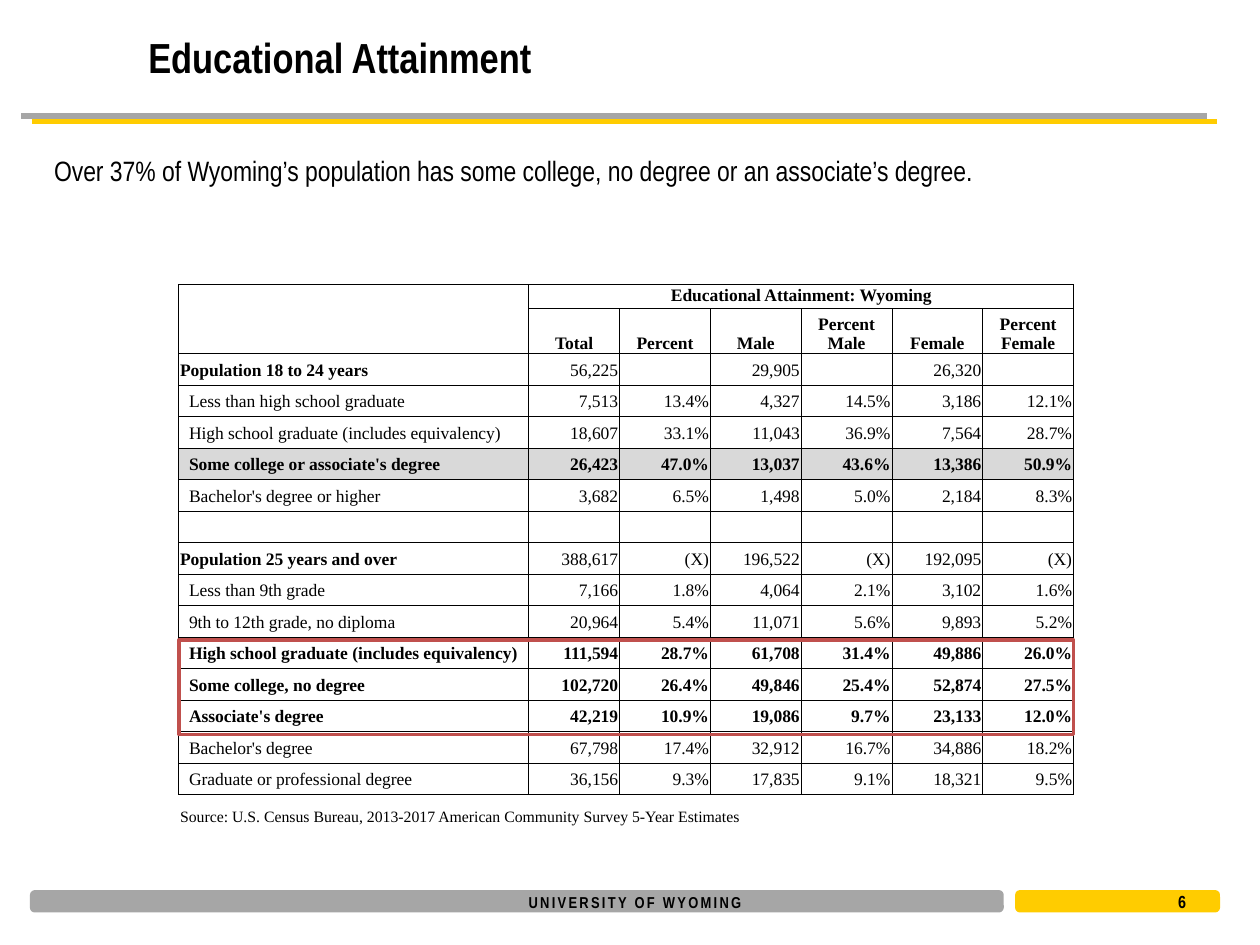
from lxml.etree import SubElement
from pptx import Presentation
from pptx.dml.color import RGBColor
from pptx.enum.shapes import MSO_CONNECTOR, MSO_SHAPE
from pptx.enum.text import MSO_ANCHOR as Anchor, PP_ALIGN as Align
from pptx.oxml.ns import qn
from pptx.util import Cm, Pt

BLACK = RGBColor(0x00, 0x00, 0x00)
WHITE = RGBColor(0xFF, 0xFF, 0xFF)
GRAY = RGBColor(0xA6, 0xA6, 0xA6)
GOLD = RGBColor(0xFF, 0xCC, 0x00)
SHADE = RGBColor(0xD9, 0xD9, 0xD9)
RED = RGBColor(0xC0, 0x50, 0x4D)
SANS, SERIF = "Arial Narrow", "Times New Roman"
PLAIN_TABLE = "{2D5ABB26-0587-4C30-8999-92F81FD0307C}"

TABLE_BOX = (3.6, 5.74, 18.03, 10.92)
LABEL_WIDTH, COLUMN_WIDTH = 5.23, 1.83
HEADER_HEIGHTS = (0.48, 0.91)
HEADINGS = ("Total", "Percent", "Male", "Percent Male", "Female", "Percent Female")
SOURCE = "Source: U.S. Census Bureau, 2013-2017 American Community Survey 5-Year Estimates"

# Row style, label, values
ROWS = (
    ("group", "Population 18 to 24 years", ("56,225", "", "29,905", "", "26,320", "")),
    ("plain", "Less than high school graduate",
     ("7,513", "13.4%", "4,327", "14.5%", "3,186", "12.1%")),
    ("plain", "High school graduate (includes equivalency)",
     ("18,607", "33.1%", "11,043", "36.9%", "7,564", "28.7%")),
    ("shaded", "Some college or associate's degree",
     ("26,423", "47.0%", "13,037", "43.6%", "13,386", "50.9%")),
    ("plain", "Bachelor's degree or higher",
     ("3,682", "6.5%", "1,498", "5.0%", "2,184", "8.3%")),
    ("plain", "", ("",) * 6),
    ("group", "Population 25 years and over",
     ("388,617", "(X)", "196,522", "(X)", "192,095", "(X)")),
    ("plain", "Less than 9th grade", ("7,166", "1.8%", "4,064", "2.1%", "3,102", "1.6%")),
    ("plain", "9th to 12th grade, no diploma",
     ("20,964", "5.4%", "11,071", "5.6%", "9,893", "5.2%")),
    ("bold", "High school graduate (includes equivalency)",
     ("111,594", "28.7%", "61,708", "31.4%", "49,886", "26.0%")),
    ("bold", "Some college, no degree",
     ("102,720", "26.4%", "49,846", "25.4%", "52,874", "27.5%")),
    ("bold", "Associate's degree", ("42,219", "10.9%", "19,086", "9.7%", "23,133", "12.0%")),
    ("plain", "Bachelor's degree", ("67,798", "17.4%", "32,912", "16.7%", "34,886", "18.2%")),
    ("plain", "Graduate or professional degree",
     ("36,156", "9.3%", "17,835", "9.1%", "18,321", "9.5%")),
)


def write_text(frame, text, size, font=SANS, bold=False, align=Align.LEFT, spacing=None):
    paragraph = frame.paragraphs[0]
    paragraph.alignment = align
    if not text:
        SubElement(paragraph._p, qn("a:endParaRPr"), sz=str(size * 100))
        return
    run = paragraph.add_run()
    run.text = text
    run.font.size = Pt(size)
    run.font.name = font
    run.font.bold = bold
    run.font.color.rgb = BLACK
    if spacing:
        run.font._element.set("spc", str(round(spacing * 100)))


def add_text(slide, box, text, size, anchor=Anchor.MIDDLE, wrap=True, side_margin=0.25,
             **text_format):
    frame = slide.shapes.add_textbox(*map(Cm, box)).text_frame
    frame.word_wrap = wrap
    frame.vertical_anchor = anchor
    frame.margin_left = frame.margin_right = Cm(side_margin)
    write_text(frame, text, size, **text_format)


def add_box(slide, kind, box, line, fill=None):
    shape = slide.shapes.add_shape(kind, *map(Cm, box))
    shape.shadow.inherit = False
    if fill is None:
        shape.fill.background()
    else:
        shape.fill.solid()
        shape.fill.fore_color.rgb = fill
    shape.line.color.rgb = line
    shape.line.width = Pt(2)


def add_shadowed_rule(slide, left, right, top):
    rule = slide.shapes.add_connector(
        MSO_CONNECTOR.STRAIGHT, Cm(left), Cm(top), Cm(right), Cm(top))
    rule.line.color.rgb = GRAY
    rule.line.width = Pt(3)
    effects = SubElement(rule._element.spPr, qn("a:effectLst"))
    shadow = SubElement(effects, qn("a:outerShdw"), dist=str(Pt(6.7)),
                        dir=str(27 * 60000), algn="ctr", rotWithShape="0")
    SubElement(shadow, qn("a:srgbClr"), val=str(GOLD))


def fill_cell(cell, text="", size=10, fill=WHITE, borders="LRTB", anchor=Anchor.MIDDLE,
              indent=0, **text_format):
    cell.margin_left = Cm(0.03 + indent)
    cell.margin_right = cell.margin_top = Cm(0.03)
    cell.margin_bottom = 0
    cell.vertical_anchor = anchor
    properties = cell._tc.get_or_add_tcPr()
    for side in borders:
        border = SubElement(properties, qn(f"a:ln{side}"), w=str(Pt(0.5)))
        solid = SubElement(border, qn("a:solidFill"))
        SubElement(solid, qn("a:srgbClr"), val=str(BLACK))
    if fill is None:
        cell.fill.background()
    else:
        cell.fill.solid()
        cell.fill.fore_color.rgb = fill
    write_text(cell.text_frame, text, size, font=SERIF, **text_format)


def add_attainment_table(slide):
    row_count, column_count = len(ROWS) + 3, len(HEADINGS) + 2
    frame = slide.shapes.add_table(row_count, column_count, *map(Cm, TABLE_BOX))
    table = frame.table
    table._tbl.tblPr.find(qn("a:tableStyleId")).text = PLAIN_TABLE
    table.first_row = table.horz_banding = False

    # Grid
    body_height = (TABLE_BOX[3] - sum(HEADER_HEIGHTS)) / (row_count - 2)
    for index, row in enumerate(table.rows):
        row.height = Cm(HEADER_HEIGHTS[index] if index < 2 else body_height)
    for index, column in enumerate(table.columns):
        column.width = Cm(COLUMN_WIDTH if index else LABEL_WIDTH)

    # Header rows
    header = dict(bold=True, align=Align.CENTER)
    for column, borders in enumerate(("LTR", "TR")):
        fill_cell(table.cell(0, column), borders=borders)
    for column, borders in enumerate(("LB", "RB")):
        fill_cell(table.cell(1, column), borders=borders)
    for column, heading in enumerate(HEADINGS, start=2):
        title = "Educational Attainment: Wyoming" if column == 2 else ""
        fill_cell(table.cell(0, column), title, anchor=Anchor.TOP, **header)
        fill_cell(table.cell(1, column), heading, anchor=Anchor.BOTTOM, **header)
    table.cell(0, 0).merge(table.cell(0, 1))
    table.cell(0, 2).merge(table.cell(0, column_count - 1))

    # Data rows
    for row, (style, label, values) in enumerate(ROWS, start=2):
        fill = SHADE if style == "shaded" else WHITE
        bold = style in ("shaded", "bold")
        fill_cell(table.cell(row, 0), label, fill=fill, bold=bold or style == "group",
                  indent=0 if style == "group" else 0.18)
        fill_cell(table.cell(row, 1), fill=fill)
        table.cell(row, 0).merge(table.cell(row, 1))
        for column, value in enumerate(values, start=2):
            fill_cell(table.cell(row, column), value, fill=fill, bold=bold, align=Align.RIGHT)

    # Source row
    last = row_count - 1
    for column in range(column_count):
        fill_cell(table.cell(last, column), "" if column else SOURCE, size=9, fill=None,
                  borders="T", anchor=Anchor.BOTTOM)
    table.cell(last, 0).merge(table.cell(last, column_count - 1))


def main():
    presentation = Presentation()
    presentation.slide_width, presentation.slide_height = Cm(25.4), Cm(19.05)
    slide = presentation.slides.add_slide(presentation.slide_layouts[6])

    # Rule and footer
    add_shadowed_rule(slide, 0.43, 24.33, 2.34)
    for left, width, color in ((0.64, 19.56, GRAY), (20.5, 4.06, GOLD)):
        add_box(slide, MSO_SHAPE.ROUNDED_RECTANGLE, (left, 17.98, width, 0.38), color, color)
    add_text(slide, (10.31, 17.86, 4.98, 0.64), "UNIVERSITY OF WYOMING", 9, wrap=False,
             side_margin=0, bold=True, align=Align.CENTER, spacing=1.3)

    # Title, statement and page number
    add_text(slide, (2.74, 0.38, 22.23, 1.52), "Educational Attainment", 24, bold=True)
    add_text(slide, (0.84, 2.97, 23.62, 1.63),
             "Over 37% of Wyoming’s population has some college, no degree or an "
             "associate’s degree.", 16, anchor=Anchor.TOP)
    add_text(slide, (23.5, 17.93, 1.27, 0.48), "6", 10, bold=True)

    # Table and highlighted rows
    add_attainment_table(slide)
    add_box(slide, MSO_SHAPE.RECTANGLE, (3.61, 12.9, 18.03, 1.91), RED)

    presentation.save("out.pptx")


if __name__ == "__main__":
    main()
